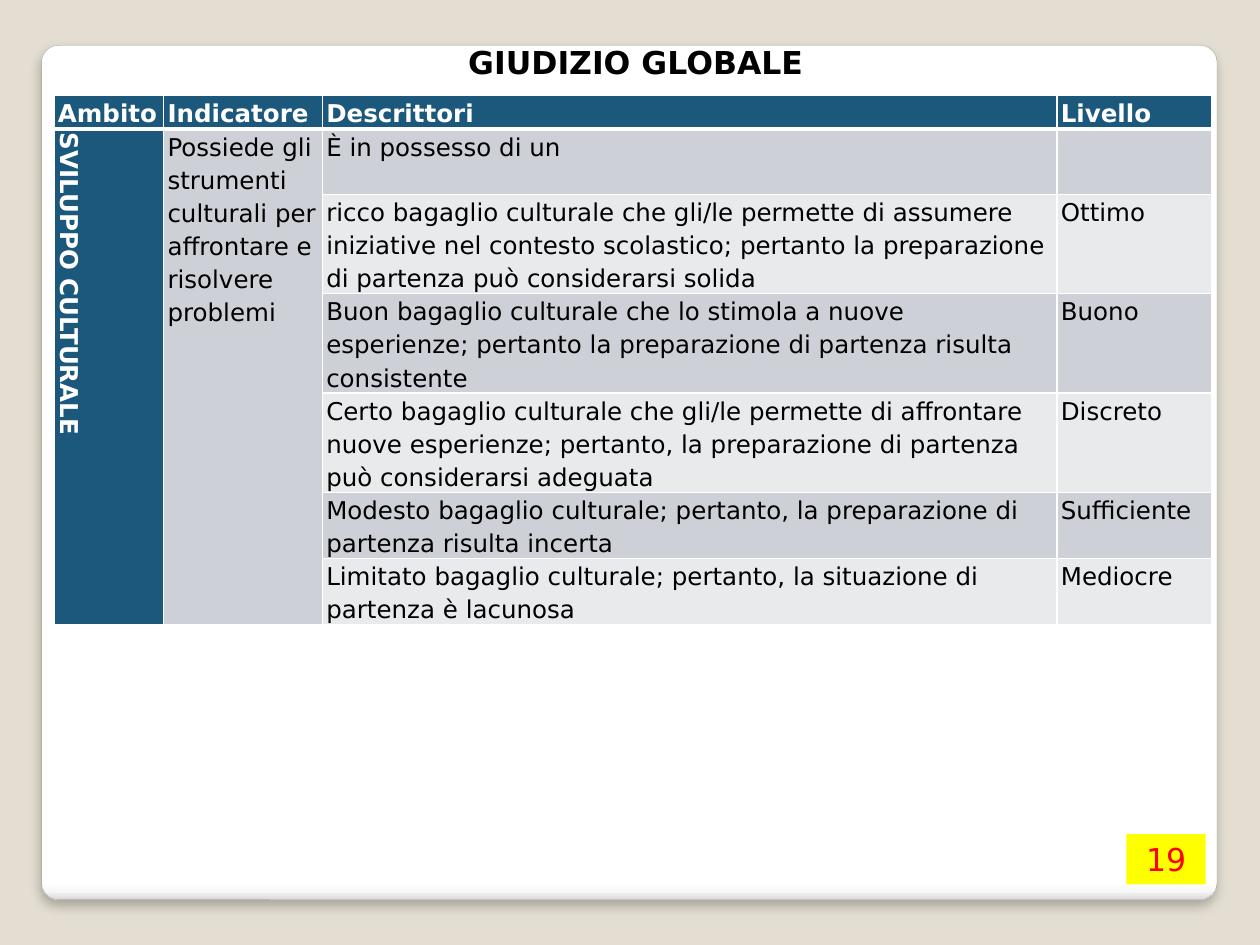
from lxml.etree import SubElement
from pptx import Presentation
from pptx.dml.color import RGBColor
from pptx.enum.shapes import MSO_SHAPE as Shape
from pptx.enum.text import MSO_ANCHOR as Anchor, PP_ALIGN as Align
from pptx.oxml import parse_xml
from pptx.oxml.ns import nsdecls, qn
from pptx.util import Inches, Pt

FONT = "DejaVu Sans"
BEIGE = RGBColor(0xE3, 0xDE, 0xD1)
BLUE = RGBColor(0x1B, 0x58, 0x7C)
BAND_DARK = RGBColor(0xCD, 0xD1, 0xD7)
BAND_LIGHT = RGBColor(0xE8, 0xEA, 0xEC)
EDGE = RGBColor(0xA4, 0xA4, 0xA4)
WHITE = RGBColor(0xFF, 0xFF, 0xFF)
BLACK = RGBColor(0, 0, 0)
YELLOW = RGBColor(0xFF, 0xFF, 0)
RED = RGBColor(0xFF, 0, 0)

CARD_STOPS = [(0, "FFFFFF"), (98, "FFFFFF"), (99, "F7F7F7"), (100, "DADADA")]
LINE_H = 0.26
COLUMNS = [("Ambito", 0.87), ("Indicatore", 1.26), ("Descrittori", 5.83), ("Livello", 1.23)]
AREA = "SVILUPPO CULTURALE"
INDICATOR = "Possiede gli strumenti culturali per affrontare e risolvere problemi"
# descriptor, level, lines of text
LEVELS = [
    ("È in possesso di un", "", 2),
    ("ricco bagaglio culturale che gli/le permette di assumere iniziative nel contesto "
     "scolastico; pertanto la preparazione di partenza può considerarsi solida", "Ottimo", 3),
    ("Buon bagaglio culturale che lo stimola a nuove esperienze; pertanto la preparazione "
     "di partenza risulta consistente", "Buono", 3),
    ("Certo bagaglio culturale che gli/le permette di affrontare nuove esperienze; pertanto, "
     "la preparazione di partenza può considerarsi adeguata", "Discreto", 3),
    ("Modesto bagaglio culturale; pertanto, la preparazione di partenza risulta incerta",
     "Sufficiente", 2),
    ("Limitato bagaglio culturale; pertanto, la situazione di partenza è lacunosa",
     "Mediocre", 2),
]


def write(tf, text, size=14, color=BLACK, bold=False, align=Align.LEFT, spacing=None):
    tf.word_wrap = True
    p = tf.paragraphs[0]
    p.alignment, p.line_spacing = align, spacing
    r = p.add_run()
    r.text = text
    r.font.name, r.font.size, r.font.bold = FONT, Pt(size), bold
    r.font.color.rgb = color


def add_card(s):
    """Rounded white panel, shaded at its foot, with a soft shadow."""
    sp = s.shapes.add_shape(Shape.ROUNDED_RECTANGLE, Inches(0.33), Inches(0.36),
                            Inches(9.33), Inches(6.78))
    sp.adjustments[0] = 0.02
    sp.line.color.rgb, sp.line.width = EDGE, Pt(0.16)
    sp.fill.background()
    sp.shadow.inherit = False
    props = sp._element.spPr
    stops = "".join(f'<a:gs pos="{pos * 1000}"><a:srgbClr val="{color}"/></a:gs>'
                    for pos, color in CARD_STOPS)
    props.replace(props.find(qn("a:noFill")), parse_xml(
        f'<a:gradFill {nsdecls("a")}><a:gsLst>{stops}</a:gsLst>'
        '<a:lin ang="5400000" scaled="0"/></a:gradFill>'))
    props.find(qn("a:effectLst")).append(parse_xml(
        f'<a:outerShdw {nsdecls("a")} blurRad="{Pt(6)}" dist="{Pt(4)}" dir="5400000" '
        'algn="t" rotWithShape="0"><a:srgbClr val="000000"><a:alpha val="25000"/>'
        '</a:srgbClr></a:outerShdw>'))


def set_borders(cell, top, bottom):
    """White borders; top and bottom are widths in points."""
    tc_pr = cell._tc.get_or_add_tcPr()
    for i, (side, width) in enumerate(zip("LRTB", (1, 1, top, bottom))):
        ln = SubElement(tc_pr, qn(f"a:ln{side}"), w=str(Pt(width)))
        SubElement(SubElement(ln, qn("a:solidFill")), qn("a:srgbClr"), val=str(WHITE))
        tc_pr.insert(i, ln)


def style_cell(cell, fill, top=1, bottom=1):
    cell.margin_left = cell.margin_right = Inches(0.03)
    cell.margin_top = cell.margin_bottom = 0
    cell.vertical_anchor = Anchor.TOP
    cell.fill.solid()
    cell.fill.fore_color.rgb = fill
    set_borders(cell, top, bottom)


def write_cell(cell, text, **fmt):
    if text:
        write(cell.text_frame, text, spacing=1.15, **fmt)


def add_levels_table(s):
    lines = [1] + [level[2] for level in LEVELS]
    width = sum(w for _, w in COLUMNS)
    table = s.shapes.add_table(len(lines), len(COLUMNS), Inches(0.43), Inches(0.76),
                               Inches(width), Inches(sum(lines) * LINE_H)).table
    table.first_row = table.horz_banding = False
    for row, count in zip(table.rows, lines):
        row.height = Inches(count * LINE_H)
    for i, (name, w) in enumerate(COLUMNS):
        table.columns[i].width = Inches(w)
        style_cell(table.cell(0, i), BLUE, bottom=3)
        write_cell(table.cell(0, i), name, color=WHITE, bold=True)
    for i, (descriptor, level, _) in enumerate(LEVELS, 1):
        band = BAND_DARK if i % 2 else BAND_LIGHT
        for j, fill in enumerate((BLUE, BAND_DARK, band, band)):
            style_cell(table.cell(i, j), fill, top=3 if i == 1 else 1)
        write_cell(table.cell(i, 2), descriptor)
        write_cell(table.cell(i, 3), level)
    for j in (0, 1):
        table.cell(1, j).merge(table.cell(len(LEVELS), j))
    write_cell(table.cell(1, 0), AREA, color=WHITE, bold=True)
    table.cell(1, 0)._tc.get_or_add_tcPr().set("vert", "vert")
    write_cell(table.cell(1, 1), INDICATOR)


def add_title(s):
    box = s.shapes.add_textbox(Inches(2.72), Inches(0.29), Inches(4.65), Inches(0.4))
    write(box.text_frame, "GIUDIZIO GLOBALE", size=18, bold=True, align=Align.CENTER)


def add_page_number(s):
    sp = s.shapes.add_textbox(Inches(8.94), Inches(6.62), Inches(0.63), Inches(0.4))
    sp.fill.solid()
    sp.fill.fore_color.rgb = YELLOW
    write(sp.text_frame, "19", size=18, color=RED, align=Align.CENTER)


def main():
    prs = Presentation()
    prs.slide_width, prs.slide_height = Inches(10), Inches(7.5)
    s = prs.slides.add_slide(prs.slide_layouts[6])
    s.background.fill.solid()
    s.background.fill.fore_color.rgb = BEIGE
    add_card(s)
    add_levels_table(s)
    add_title(s)
    add_page_number(s)
    prs.save("out.pptx")


if __name__ == "__main__":
    main()
